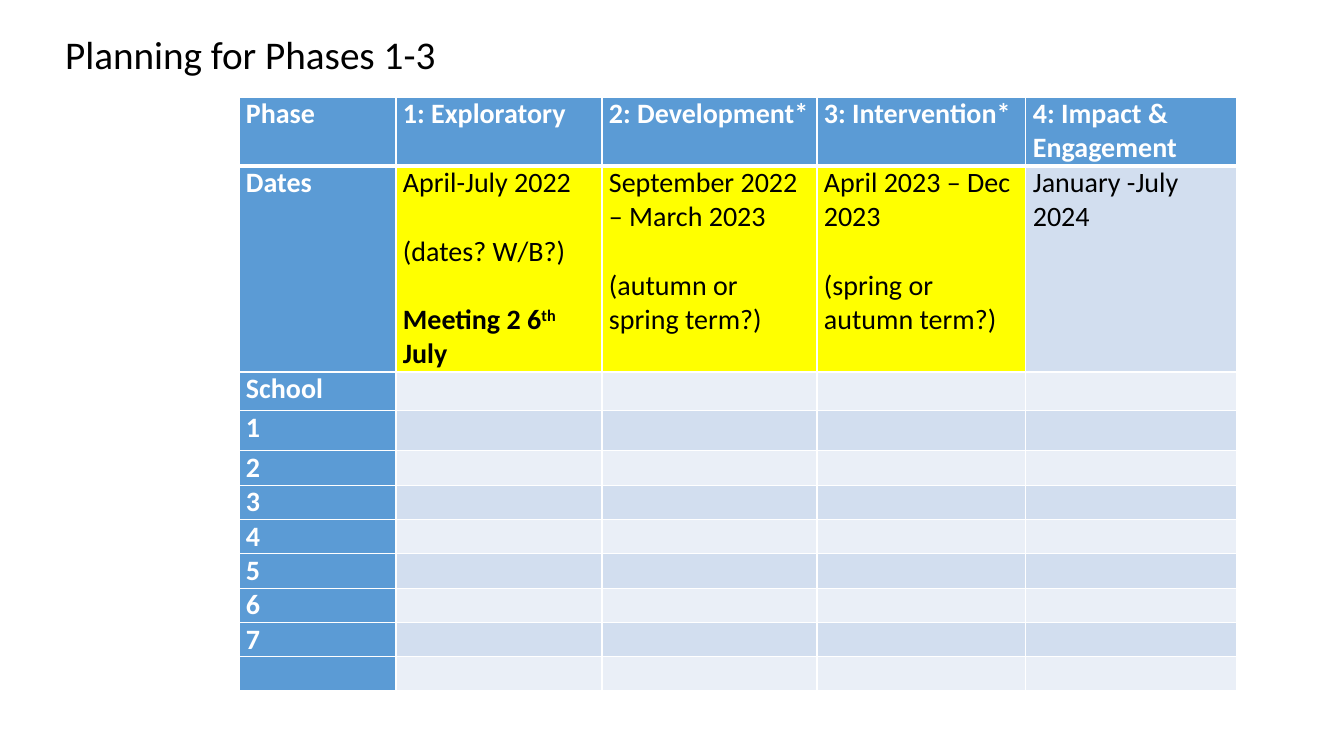
from lxml.etree import SubElement
from pptx import Presentation
from pptx.dml.color import RGBColor
from pptx.enum.text import MSO_ANCHOR, PP_ALIGN
from pptx.oxml.ns import qn
from pptx.util import Pt

SCALE = 914400 / 100.8
FONT = "Calibri"
WHITE = RGBColor(0xFF, 0xFF, 0xFF)
BLACK = RGBColor(0, 0, 0)
BLUE = RGBColor(0x5B, 0x9B, 0xD5)
YELLOW = RGBColor(0xFF, 0xFF, 0)
BAND_DARK = RGBColor(0xD2, 0xDE, 0xEF)
BAND_LIGHT = RGBColor(0xEA, 0xEF, 0xF7)

TEXT_SIZE = 20
PARAGRAPH_GAP = 24.4
COLUMN_WIDTHS = [157, 206, 215, 209, 211]
ROW_HEIGHTS = [69, 206, 39, 40] + [34] * 7
PHASES = ["Phase", "1: Exploratory", "2: Development*", "3: Intervention*",
          "4: Impact & Engagement"]
DATES = [
    ["April-July 2022", "(dates? W/B?)"],
    ["September 2022 – March 2023", "(autumn or spring term?)"],
    ["April 2023 – Dec 2023", "(spring or autumn term?)"],
    ["January -July 2024 "],
]
MEETING = [("Meeting 2 6", False), ("th", True), (" July", False)]
ROW_LABELS = ["Dates", "School"] + [str(school) for school in range(1, 8)]


def px(length):
    return round(length * SCALE)


def style(paragraph, size, color, bold=False):
    font = paragraph.font
    font.name, font.size, font.bold = FONT, Pt(size), bold
    font.color.rgb = color


def add_title(slide, text):
    title = slide.shapes.title
    title.left, title.top, title.width, title.height = map(px, (55, 25, 655, 57))
    frame = title.text_frame
    frame.text = text
    frame.word_wrap = True
    frame.vertical_anchor = MSO_ANCHOR.TOP
    heading = frame.paragraphs[0]
    heading.alignment = PP_ALIGN.LEFT
    style(heading, 28, BLACK)


def set_borders(cell, top, bottom):
    properties = cell._tc.get_or_add_tcPr()
    sides = [("L", 1), ("R", 1), ("T", top), ("B", bottom)]
    for index, (side, width) in enumerate(sides):
        line = SubElement(properties, qn(f"a:ln{side}"), w=str(Pt(width)))
        fill = SubElement(line, qn("a:solidFill"))
        SubElement(fill, qn("a:srgbClr"), val=str(WHITE))
        properties.insert(index, line)


def format_cell(cell, fill, row):
    cell.margin_left = cell.margin_right = px(7)
    cell.margin_top = cell.margin_bottom = 0
    cell.fill.solid()
    cell.fill.fore_color.rgb = fill
    set_borders(cell, 3 if row == 1 else 1, 3 if row == 0 else 1)


def write_cell(cell, lines, color, bold=False):
    cell.text = "\n".join(lines)
    for index, paragraph in enumerate(cell.text_frame.paragraphs):
        style(paragraph, TEXT_SIZE, color, bold)
        if index:
            paragraph.space_before = Pt(PARAGRAPH_GAP)


def add_meeting(cell):
    meeting = cell.text_frame.add_paragraph()
    meeting.space_before = Pt(PARAGRAPH_GAP)
    style(meeting, TEXT_SIZE, BLACK, True)
    for text, raised in MEETING:
        run = meeting.add_run()
        run.text = text
        if raised:
            run._r.get_or_add_rPr().set("baseline", "30000")


def cell_fill(row, column):
    if row == 0 or column == 0:
        return BLUE
    if row == 1 and column < 4:
        return YELLOW
    return BAND_DARK if row % 2 else BAND_LIGHT


def add_plan(slide):
    plan = slide.shapes.add_table(
        len(ROW_HEIGHTS), len(COLUMN_WIDTHS), px(239), px(97),
        px(sum(COLUMN_WIDTHS)), px(sum(ROW_HEIGHTS))).table
    plan.first_row = plan.horz_banding = False
    for column, width in zip(plan.columns, COLUMN_WIDTHS):
        column.width = px(width)
    for row, height in zip(plan.rows, ROW_HEIGHTS):
        row.height = px(height)
    for row in range(len(ROW_HEIGHTS)):
        for column in range(len(COLUMN_WIDTHS)):
            format_cell(plan.cell(row, column), cell_fill(row, column), row)
    for column, phase in enumerate(PHASES):
        write_cell(plan.cell(0, column), [phase], WHITE, True)
    for row, label in enumerate(ROW_LABELS, 1):
        write_cell(plan.cell(row, 0), [label], WHITE, True)
    for column, dates in enumerate(DATES, 1):
        write_cell(plan.cell(1, column), dates, BLACK)
    add_meeting(plan.cell(1, 1))


def main():
    deck = Presentation()
    deck.slide_width, deck.slide_height = px(1344), px(756)
    slide = deck.slides.add_slide(deck.slide_layouts[5])
    add_title(slide, "Planning for Phases 1-3")
    add_plan(slide)
    deck.save("out.pptx")


main()
